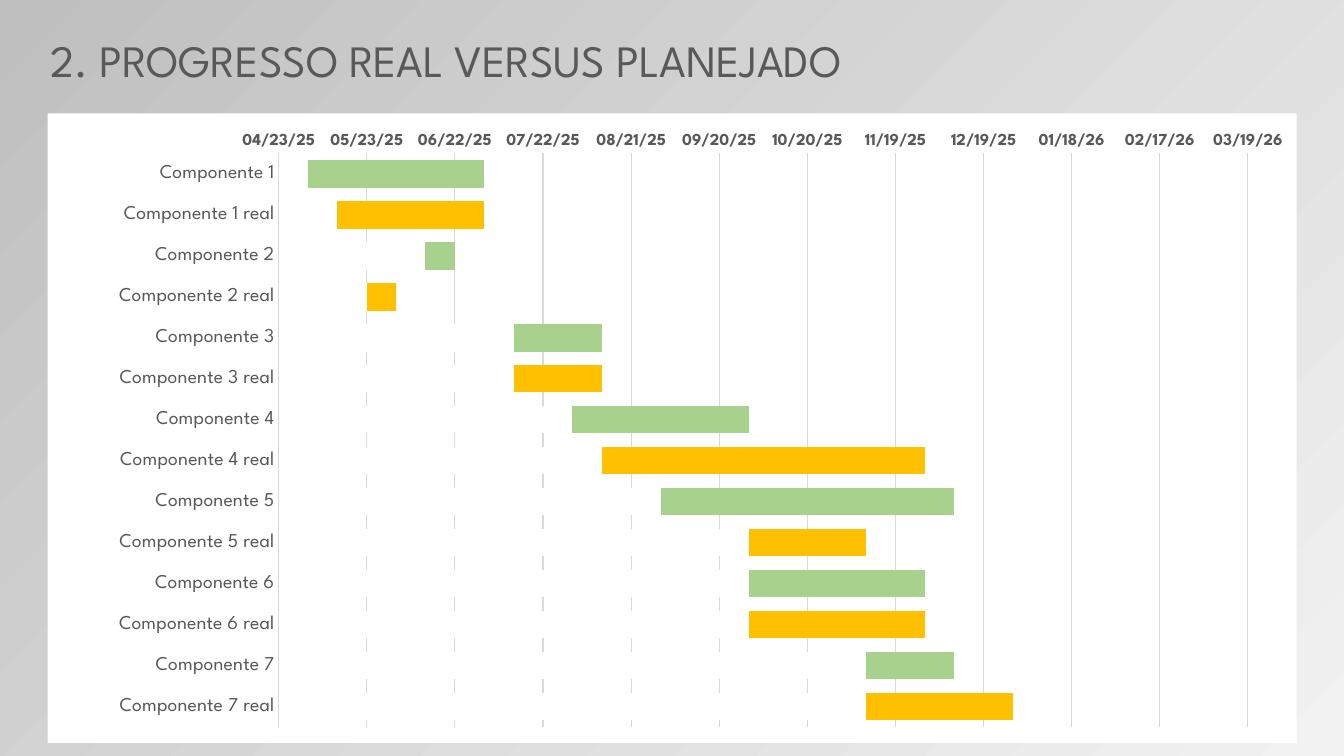
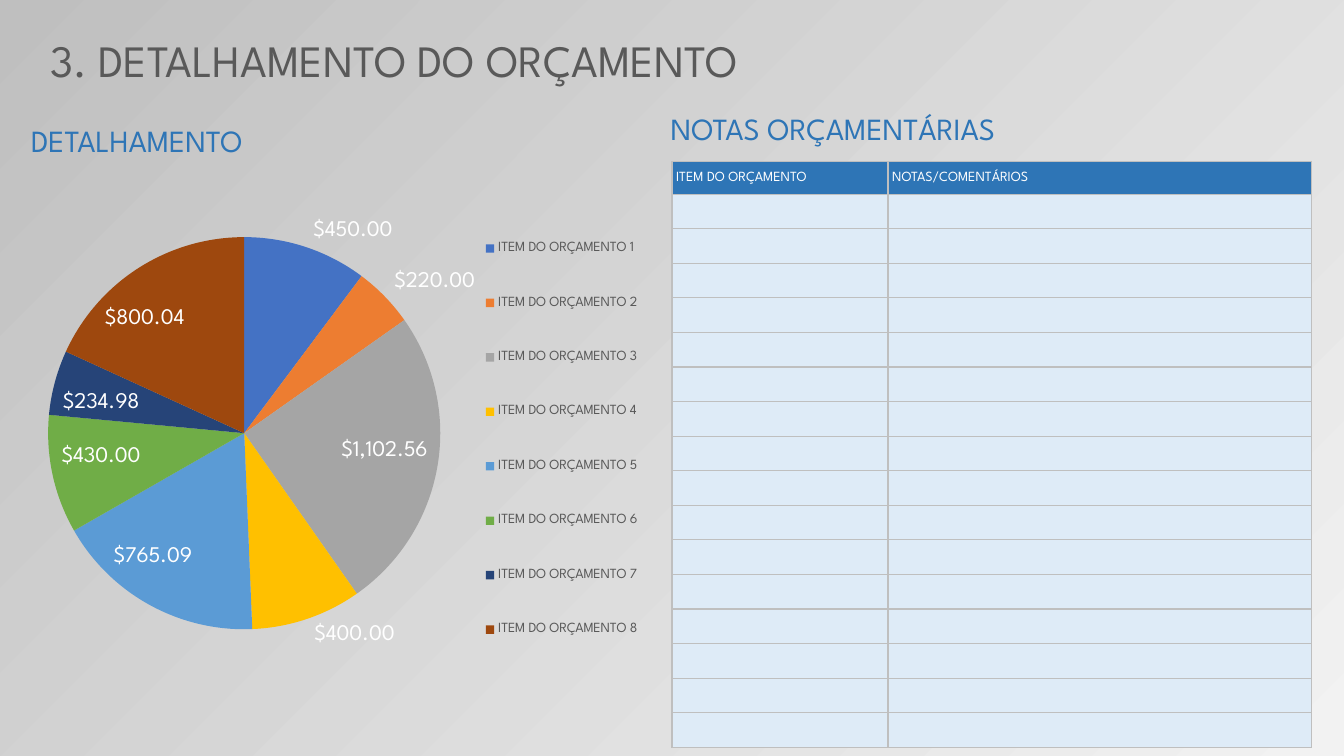
from lxml import etree
from pptx import Presentation
from pptx.chart.data import CategoryChartData
from pptx.dml.color import RGBColor
from pptx.enum.chart import (XL_CHART_TYPE, XL_LABEL_POSITION,
                             XL_LEGEND_POSITION, XL_TICK_MARK)
from pptx.enum.text import MSO_ANCHOR, MSO_AUTO_SIZE
from pptx.oxml import parse_xml
from pptx.oxml.ns import nsdecls, qn
from pptx.util import Pt

BAR, PIE = XL_CHART_TYPE.BAR_CLUSTERED, XL_CHART_TYPE.PIE
BEST = XL_LABEL_POSITION.BEST_FIT
RIGHT = XL_LEGEND_POSITION.RIGHT
NO_TICK = XL_TICK_MARK.NONE
MIDDLE = MSO_ANCHOR.MIDDLE
GROW = MSO_AUTO_SIZE.SHAPE_TO_FIT_TEXT

FONT = "League Spartan"
WHITE = RGBColor(0xFF, 0xFF, 0xFF)
BLACK = RGBColor(0, 0, 0)
INK = RGBColor(0x59, 0x59, 0x59)
BLUE = RGBColor(0x2E, 0x75, 0xB6)
PALE = RGBColor(0xDE, 0xEB, 0xF7)
GRID = RGBColor(0xD9, 0xD9, 0xD9)
EDGE = RGBColor(0xBF, 0xBF, 0xBF)
LIGHT = RGBColor(0xF2, 0xF2, 0xF2)
GREEN = RGBColor(0xA9, 0xD1, 0x8E)
GOLD = RGBColor(0xFF, 0xC0, 0x00)

# Content: first and last day of each bar, counted from the axis start
START, SPAN, STEP = 45770, 330, 30
TASKS = [
    ("Componente 1", 10, 70), ("Componente 1 real", 20, 70),
    ("Componente 2", 50, 60), ("Componente 2 real", 30, 40),
    ("Componente 3", 80, 110), ("Componente 3 real", 80, 110),
    ("Componente 4", 100, 160), ("Componente 4 real", 110, 220),
    ("Componente 5", 130, 230), ("Componente 5 real", 160, 200),
    ("Componente 6", 160, 220), ("Componente 6 real", 160, 220),
    ("Componente 7", 200, 230), ("Componente 7 real", 200, 250),
]
COSTS = [
    (450, RGBColor(0x44, 0x72, 0xC4)), (220, RGBColor(0xED, 0x7D, 0x31)),
    (1102.56, RGBColor(0xA5, 0xA5, 0xA5)), (400, GOLD),
    (765.09, RGBColor(0x5B, 0x9B, 0xD5)), (430, RGBColor(0x70, 0xAD, 0x47)),
    (234.98, RGBColor(0x26, 0x44, 0x78)), (800.04, RGBColor(0x9E, 0x48, 0x0E)),
]
MONEY = r'_("$"* #,##0.00_);_("$"* \(#,##0.00\);_("$"* "-"??_);_(@_)'
HEADS = ["ITEM DO ORÇAMENTO", "NOTAS/COMENTÁRIOS"]
WIDTHS = [154.3, 302.3]
HEAD_H, ROW_H, ROWS = 23.5, 24.7, 16


def style(font, size, color, bold=False):
    font.name, font.size, font.bold = FONT, Pt(size), bold
    font.color.rgb = color


def paint(fill, color):
    fill.solid()
    fill.fore_color.rgb = color


def add_text(slide, text, box, size, color, wrap=True):
    frame = slide.shapes.add_textbox(*map(Pt, box)).text_frame
    frame.word_wrap, frame.auto_size = wrap, GROW
    frame.text = text
    style(frame.paragraphs[0].runs[0].font, size, color)


def add_slide(deck, title, wrap):
    slide = deck.slides.add_slide(deck.slide_layouts[6])
    fill = slide.background.fill
    fill.gradient()
    fill.gradient_angle = 135
    for stop, color in zip(fill.gradient_stops, (LIGHT, EDGE)):
        stop.color.rgb = color
    first = slide._element.xpath(".//p:bg//a:srgbClr")[0]
    etree.SubElement(first, qn("a:alpha"), val="40000")
    add_text(slide, title, (28.8, 19.8, 625, 46), 32, INK, wrap)
    return slide


def layout(x, y, w, h, inner=False):
    target = '<c:layoutTarget val="inner"/>' if inner else ""
    return parse_xml(
        f'<c:layout {nsdecls("c")}><c:manualLayout>{target}'
        '<c:xMode val="edge"/><c:yMode val="edge"/>'
        f'<c:x val="{x}"/><c:y val="{y}"/><c:w val="{w}"/><c:h val="{h}"/>'
        '</c:manualLayout></c:layout>')


def add_chart(slide, kind, box, names, series, size, plot):
    data = CategoryChartData()
    data.categories = names
    for num, vals in enumerate(series, 1):
        data.add_series(f"Series {num}", vals)
    chart = slide.shapes.add_chart(kind, *map(Pt, box), data).chart
    chart.has_title = chart.has_legend = False
    style(chart.font, size, BLACK)
    area = chart._chartSpace.chart.plotArea
    for old in area.findall(qn("c:layout")):
        area.remove(old)
    area.insert(0, layout(*plot, inner=True))
    return chart


def add_gantt(slide):
    names, starts, ends = zip(*TASKS)
    series = [[START + day for day in days] for days in (ends, starts)]
    chart = add_chart(slide, BAR, (34, 80.9, 892.3, 449.8), names, series,
                      14, (0.185, 0.064, 0.776, 0.911))
    chart._chartSpace.txPr.addprevious(parse_xml(
        f'<c:spPr {nsdecls("c", "a")}><a:solidFill>'
        f'<a:srgbClr val="{WHITE}"/></a:solidFill>'
        '<a:ln><a:noFill/></a:ln></c:spPr>'))

    # White start bars cover the head of the end bars
    plot = chart.plots[0]
    plot.gap_width, plot.overlap, plot.vary_by_categories = 50, 100, False
    done, mask = plot.series
    paint(done.format.fill, GOLD)
    paint(mask.format.fill, WHITE)
    for num in range(0, len(TASKS), 2):
        paint(done.points[num].format.fill, GREEN)

    rows, dates = chart.category_axis, chart.value_axis
    for axis in (rows, dates):
        axis.major_tick_mark = axis.minor_tick_mark = NO_TICK
    style(rows.tick_labels.font, 14, INK)
    rows.reverse_order = True
    style(dates.tick_labels.font, 12, INK, True)
    dates.tick_labels.number_format = "mm/dd/yy;@"
    dates.tick_labels.number_format_is_linked = False
    dates.minimum_scale, dates.maximum_scale = START, START + SPAN
    dates.major_unit = STEP
    dates.format.line.fill.background()
    for line in (rows.format.line, dates.major_gridlines.format.line):
        line.color.rgb, line.width = GRID, Pt(0.75)


def add_pie(slide):
    vals, colors = zip(*COSTS)
    names = [f"ITEM DO ORÇAMENTO {num}" for num in range(1, len(COSTS) + 1)]
    chart = add_chart(slide, PIE, (-64.8, 64.8, 545, 460.8), names, [vals],
                      10, (0.182, 0.062, 0.514, 0.938))
    plot = chart.plots[0]
    plot.vary_by_categories = True
    for num, color in enumerate(colors):
        paint(plot.series[0].points[num].format.fill, color)

    plot.has_data_labels = True
    labels = plot.data_labels
    labels.show_value, labels.show_percentage = True, False
    labels.number_format, labels.number_format_is_linked = MONEY, False
    labels.position = BEST
    style(labels.font, 16, WHITE)

    chart.has_legend = True
    legend = chart.legend
    legend.position, legend.include_in_layout = RIGHT, False
    style(legend.font, 10, INK)
    for old in legend._element.findall(qn("c:layout")):
        legend._element.remove(old)
    legend._element.find(qn("c:legendPos")).addnext(
        layout(0.75, 0.17, 0.21, 0.74))


def add_edges(cell):
    props = cell._tc.get_or_add_tcPr()
    for side in "LRTB":
        props.append(parse_xml(
            f'<a:ln{side} {nsdecls("a")} w="{Pt(1)}"><a:solidFill>'
            f'<a:srgbClr val="{EDGE}"/></a:solidFill></a:ln{side}>'))


def add_notes(slide):
    box = (480, 115.2, sum(WIDTHS), HEAD_H + ROWS * ROW_H)
    table = slide.shapes.add_table(ROWS + 1, len(HEADS), *map(Pt, box)).table
    for col, width in zip(table.columns, WIDTHS):
        col.width = Pt(width)
    for num, row in enumerate(table.rows):
        row.height = Pt(ROW_H if num else HEAD_H)
        for cell, head in zip(row.cells, HEADS):
            cell.margin_left = Pt(3)
            cell.margin_right = cell.margin_top = cell.margin_bottom = 0
            cell.vertical_anchor = MIDDLE
            add_edges(cell)
            paint(cell.fill, PALE if num else BLUE)
            if num == 0:
                cell.text_frame.text = head
                run = cell.text_frame.paragraphs[0].runs[0]
                style(run.font, 10, WHITE)


def main():
    deck = Presentation()
    deck.slide_width, deck.slide_height = Pt(960), Pt(540)

    # Planned and real progress
    add_gantt(add_slide(deck, "2. PROGRESSO REAL VERSUS PLANEJADO", False))

    # Budget
    slide = add_slide(deck, "3. DETALHAMENTO DO ORÇAMENTO", True)
    add_pie(slide)
    add_notes(slide)
    for text, left, top in (("DETALHAMENTO", 15.1, 83.5),
                            ("NOTAS ORÇAMENTÁRIAS", 472, 74.9)):
        add_text(slide, text, (left, top, 319.7, 33.8), 22, BLUE)
    deck.save("out.pptx")


if __name__ == "__main__":
    main()
